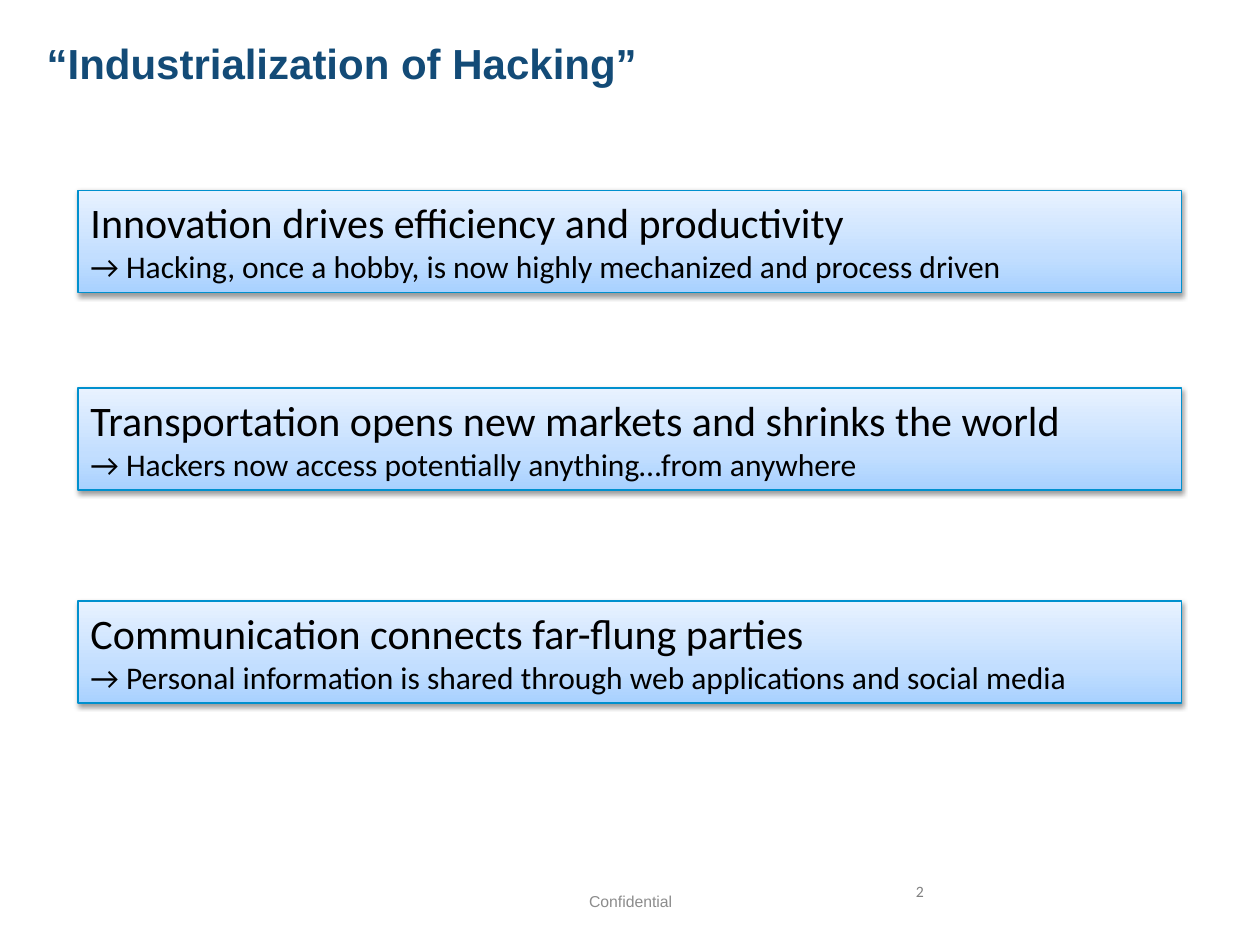
from copy import deepcopy

from lxml.etree import SubElement
from pptx import Presentation
from pptx.dml.color import RGBColor
from pptx.enum.shapes import MSO_SHAPE
from pptx.enum.text import MSO_ANCHOR, MSO_AUTO_SIZE, PP_ALIGN
from pptx.oxml.ns import qn
from pptx.util import Inches, Pt

NAVY = RGBColor(0x13, 0x4B, 0x77)
BLACK = RGBColor(0, 0, 0)
BORDER = RGBColor(0x00, 0x90, 0xCE)
FOOTER_GREY = RGBColor(0x8C, 0x8C, 0x8C)
NUMBER_GREY = RGBColor(0x80, 0x80, 0x80)
GRADIENT = [
    (0, RGBColor(0xA8, 0xD1, 0xFF)),
    (0.35, RGBColor(0xC2, 0xDE, 0xFF)),
    (1, RGBColor(0xE8, 0xF2, 0xFF)),
]

TITLE = "“Industrialization of Hacking”"
PANELS = [
    (1.51, "Innovation drives efficiency and productivity",
     "→ Hacking, once a hobby, is now highly mechanized and process driven"),
    (3.08, "Transportation opens new markets and shrinks the world",
     "→ Hackers now access potentially anything…from anywhere"),
    (4.77, "Communication connects far-flung parties",
     "→ Personal information is shared through web applications and social media"),
]
FOOTERS = [
    (3.42, 3.17, "Confidential", "Arial", FOOTER_GREY, PP_ALIGN.CENTER, MSO_ANCHOR.MIDDLE),
    (7.17, 2.33, "2", "Calibri", NUMBER_GREY, PP_ALIGN.LEFT, MSO_ANCHOR.TOP),
]


def add_text(p, text, size, font, color, align=PP_ALIGN.LEFT, bold=False):
    p.alignment = align
    r = p.add_run()
    r.text = text
    r.font.size = Pt(size)
    r.font.name = font
    r.font.bold = bold
    r.font.color.rgb = color


def set_gradient(sp):
    sp.fill.gradient()
    sp.fill.gradient_angle = 90
    stops = sp._element.spPr.find(".//" + qn("a:gsLst"))
    stops.append(deepcopy(stops[0]))
    for stop, (position, color) in zip(sp.fill.gradient_stops, GRADIENT):
        stop.position = position
        stop.color.rgb = color


def set_shadow(sp):
    sp.shadow.inherit = False
    effects = sp._element.spPr.find(qn("a:effectLst"))
    shadow = SubElement(effects, qn("a:outerShdw"), blurRad="40000", dist="20000",
                        dir="5400000", rotWithShape="0")
    color = SubElement(shadow, qn("a:srgbClr"), val="000000")
    SubElement(color, qn("a:alpha"), val="38000")


def add_panel(slide, top, heading, detail):
    sp = slide.shapes.add_shape(MSO_SHAPE.RECTANGLE, Inches(0.62), Inches(top),
                                Inches(8.76), Inches(0.81))
    set_gradient(sp)
    sp.line.color.rgb = BORDER
    sp.line.width = Pt(0.75)
    set_shadow(sp)
    tf = sp.text_frame
    tf.word_wrap = True
    tf.auto_size = MSO_AUTO_SIZE.SHAPE_TO_FIT_TEXT
    tf.vertical_anchor = MSO_ANCHOR.TOP
    add_text(tf.paragraphs[0], heading, 24, "Calibri", BLACK)
    add_text(tf.add_paragraph(), detail, 18, "Calibri", BLACK)


def main():
    prs = Presentation()
    prs.slide_width, prs.slide_height = Inches(10), Inches(7.5)
    slide = prs.slides.add_slide(prs.slide_layouts[5])

    title = slide.shapes.title
    title.left, title.top = Inches(0.27), Inches(0.01)
    title.width, title.height = Inches(9.46), Inches(0.97)
    title.text_frame.vertical_anchor = MSO_ANCHOR.MIDDLE
    add_text(title.text_frame.paragraphs[0], TITLE, 24, "Arial", NAVY, bold=True)

    for left, width, text, font, color, align, anchor in FOOTERS:
        box = slide.shapes.add_textbox(Inches(left), Inches(6.95), Inches(width), Inches(0.4))
        tf = box.text_frame
        tf.word_wrap = True
        tf.vertical_anchor = anchor
        add_text(tf.paragraphs[0], text, 9, font, color, align)

    for panel in PANELS:
        add_panel(slide, *panel)

    prs.save("out.pptx")


if __name__ == "__main__":
    main()
